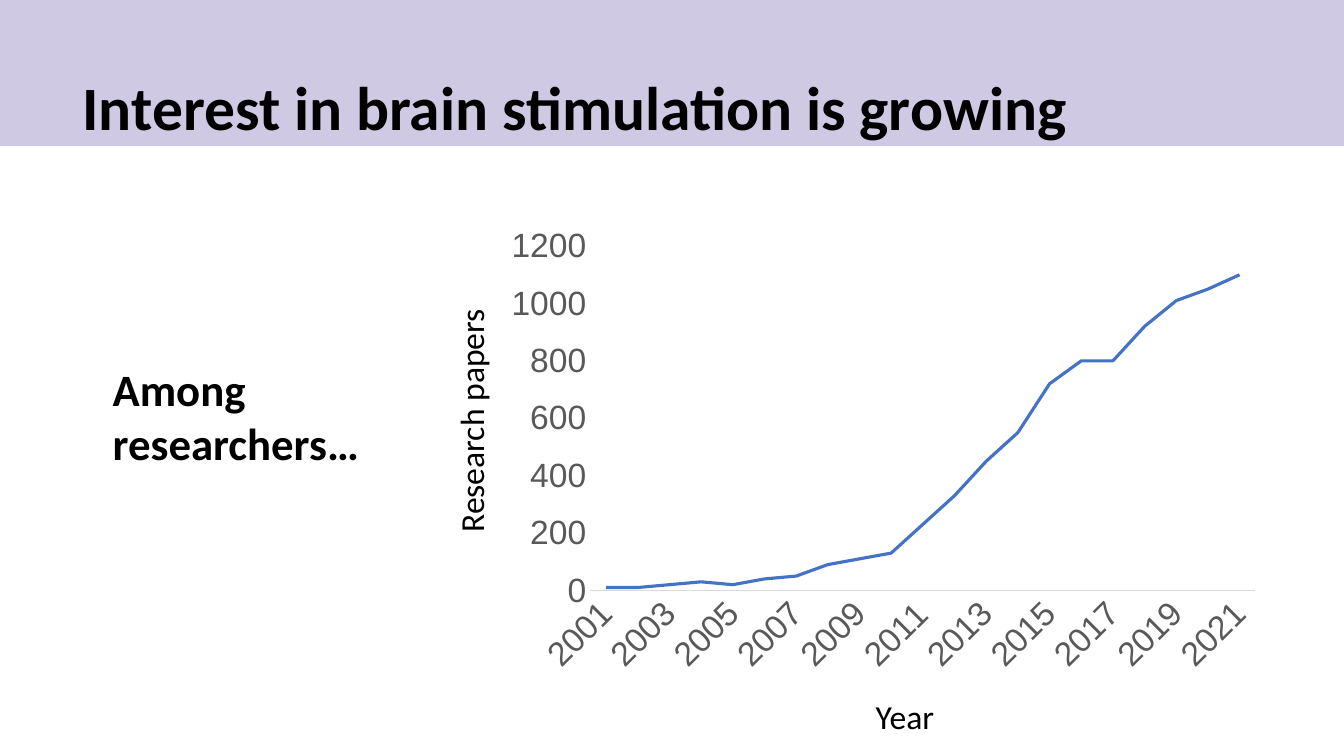
from dataclasses import dataclass

import pptx
import pptx.chart.chart
import pptx.chart.data
import pptx.dml.color
import pptx.enum.chart
import pptx.enum.shapes
import pptx.enum.text
import pptx.oxml.ns
import pptx.slide
import pptx.util

Cm = pptx.util.Cm
Pt = pptx.util.Pt
RGB = pptx.dml.color.RGBColor


@dataclass(frozen=True)
class Theme:
    band: RGB = RGB.from_string("CFC9E4")
    ink: RGB = RGB.from_string("000000")
    tick: RGB = RGB.from_string("595959")
    axis: RGB = RGB.from_string("D9D9D9")
    line: RGB = RGB.from_string("4472C4")
    body: str = "Calibri"
    chart: str = "Arial"
    head: int = 44
    lead: int = 32
    label: int = 24
    small: int = 10


@dataclass(frozen=True)
class Box:
    """A place on the slide, in centimetres."""
    left: float
    top: float
    width: float
    height: float

    def place(self) -> tuple[Cm, Cm, Cm, Cm]:
        return Cm(self.left), Cm(self.top), Cm(self.width), Cm(self.height)


@dataclass(frozen=True)
class Label:
    text: str
    box: Box
    size: int
    bold: bool = False
    turn: int = 0
    space: float = 1.0


THEME = Theme()
WIDTH, HEIGHT = 33.87, 19.05
BAND = Box(0, 0, WIDTH, 3.68)
PLOT = Box(12.5, 5.49, 19.53, 11.73)
LABELS = [
    Label("Interest in brain stimulation is growing",
          Box(1.83, 1.83, 29.21, 3.68), THEME.head, bold=True, space=0.9),
    Label("Research papers", Box(8.69, 9.86, 6.35, 1.27), THEME.label, turn=270),
    Label("Year", Box(21.82, 17.42, 2.92, 1.27), THEME.label),
    Label("Among researchers…", Box(2.59, 8.99, 7.52, 3), THEME.lead, bold=True),
]
YEARS = [str(year) for year in range(2001, 2022)]
PAPERS = [10, 10, 20, 30, 20, 40, 50, 90, 110, 130, 230,
          330, 450, 550, 720, 800, 800, 920, 1010, 1050, 1100]


def add_band(slide: pptx.slide.Slide, box: Box) -> None:
    band = slide.shapes.add_shape(
        pptx.enum.shapes.MSO_SHAPE.RECTANGLE, *box.place())
    band.shadow.inherit = False
    band.fill.solid()
    band.fill.fore_color.rgb = THEME.band
    band.line.fill.background()


def add_text(slide: pptx.slide.Slide, text: str, *, box: Box, size: int,
             bold: bool, turn: int, space: float) -> None:
    shape = slide.shapes.add_textbox(*box.place())
    shape.rotation = turn
    frame = shape.text_frame
    frame.word_wrap = True
    frame.vertical_anchor = pptx.enum.text.MSO_ANCHOR.TOP
    para = frame.paragraphs[0]
    para.line_spacing = space
    run = para.add_run()
    run.text = text
    style(run.font, face=THEME.body, size=size, color=THEME.ink)
    run.font.bold = bold


def style(font: pptx.text.text.Font, *, face: str, size: int, color: RGB) -> None:
    font.name = face
    font.size = Pt(size)
    font.color.rgb = color


def style_axis(axis: pptx.chart.axis._BaseAxis) -> None:
    none = pptx.enum.chart.XL_TICK_MARK.NONE
    axis.major_tick_mark = axis.minor_tick_mark = none
    axis.has_major_gridlines = False
    style(axis.tick_labels.font, face=THEME.chart, size=THEME.label,
          color=THEME.tick)


def add_chart(slide: pptx.slide.Slide, box: Box) -> None:
    data = pptx.chart.data.CategoryChartData()
    data.categories = YEARS
    data.add_series("Series 1", PAPERS)
    chart = slide.shapes.add_chart(
        pptx.enum.chart.XL_CHART_TYPE.LINE, *box.place(), data).chart
    chart.has_legend = chart.has_title = False
    style(chart.font, face=THEME.chart, size=THEME.small, color=THEME.ink)

    years, papers = chart.category_axis, chart.value_axis
    for axis in (years, papers):
        style_axis(axis)
    years.format.line.color.rgb = THEME.axis
    years.format.line.width = Pt(0.75)
    slant = years._element.find(pptx.oxml.ns.qn("c:txPr")).bodyPr
    slant.set("rot", "-2700000")
    papers.format.line.fill.background()
    papers.minimum_scale, papers.maximum_scale = 0, 1200
    papers.major_unit = 200

    plot = chart.plots[0]
    plot.vary_by_categories = False
    curve = plot.series[0]
    curve.smooth = False
    curve.marker.style = pptx.enum.chart.XL_MARKER_STYLE.NONE
    curve.format.line.color.rgb = THEME.line
    curve.format.line.width = Pt(2.25)


def main() -> None:
    deck = pptx.Presentation()
    deck.slide_width, deck.slide_height = Cm(WIDTH), Cm(HEIGHT)
    slide = deck.slides.add_slide(deck.slide_layouts[6])
    add_band(slide, BAND)
    add_chart(slide, PLOT)
    for label in LABELS:
        add_text(slide, label.text, box=label.box, size=label.size,
                 bold=label.bold, turn=label.turn, space=label.space)
    deck.save("out.pptx")


if __name__ == "__main__":
    main()
